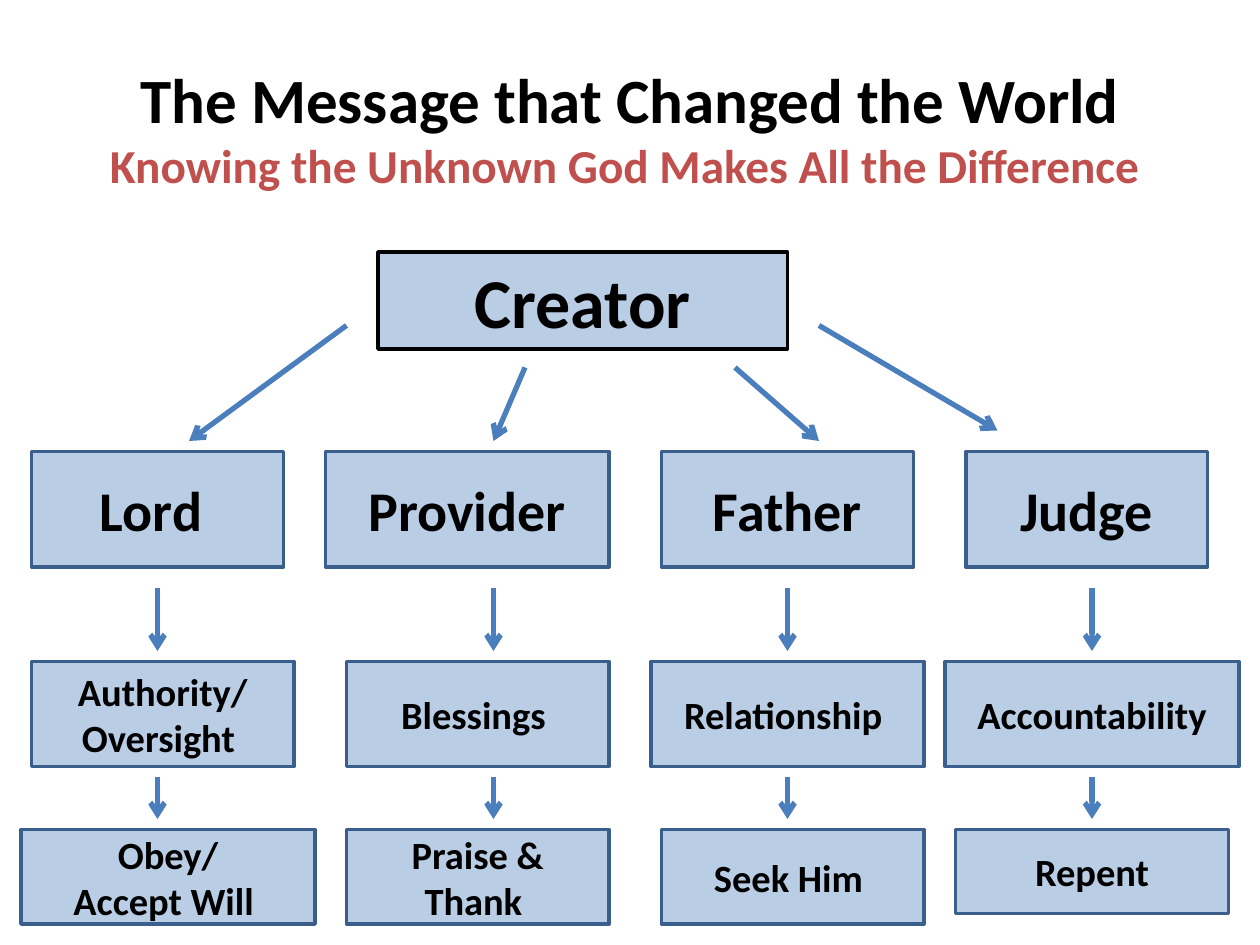
"""Build a one-page tree diagram on a grid of twelfths of an inch."""
from typing import Any, NamedTuple

from lxml import etree
from pptx import Presentation
from pptx import util as u
from pptx.dml.color import RGBColor
from pptx.enum import shapes, text
from pptx.oxml.ns import qn

COLUMNS, ROWS = 120, 90
CELL = u.Inches(10) // COLUMNS
COLORS = {
    "ink": "000000",
    "accent": "C0504D",
    "fill": "B9CDE5",
    "edge": "3A5F8C",
    "arrow": "4B7EBC",
}


class Node(NamedTuple):
    label: str
    column: float
    width: float
    height: float


class Level(NamedTuple):
    row: float
    size: int
    edge: str
    nodes: list[Node]


class Arrow(NamedTuple):
    start: tuple[float, float]
    end: tuple[float, float]


TITLE = [
    ("The Message that Changed the World", 36, "ink"),
    ("Knowing the Unknown God Makes All the Difference ", 27, "accent"),
]
LEVELS = [
    Level(24, 40, "ink", [Node("Creator", 36, 39, 9.25)]),
    Level(43, 32, "edge", [
        Node("Lord ", 3, 24, 11),
        Node("Provider", 31, 27, 11),
        Node("Father", 63, 24, 11),
        Node("Judge", 92, 23, 11),
    ]),
    Level(63, 22, "edge", [
        Node("Authority/\nOversight ", 3, 25, 10),
        Node("Blessings ", 33, 25, 10),
        Node("Relationship ", 62, 26, 10),
        Node("Accountability", 90, 28, 10),
    ]),
    Level(79, 22, "edge", [
        Node("Obey/\nAccept Will ", 2, 28, 9),
        Node("Praise & Thank ", 33, 25, 9),
        Node("Seek Him ", 63, 25, 9),
        Node("Repent", 91, 26, 8),
    ]),
]
BRANCHES = [
    Arrow((33, 31), (18, 42)),
    Arrow((50, 35), (47, 42)),
    Arrow((70, 35), (78, 42)),
    Arrow((78, 31), (95, 41)),
]
DROPS = [
    Arrow((column, top), (column, bottom))
    for top, bottom in [(56, 62), (74, 78)]
    for column in [15, 47, 75, 104]
]


def cells(*counts: float) -> list[int]:
    """Turn grid counts into lengths."""
    return [round(count * CELL) for count in counts]


def color(name: str) -> RGBColor:
    """Look up a named colour."""
    return RGBColor.from_string(COLORS[name])


def apply_format(target: Any, values: dict[str, Any]) -> None:
    """Set every attribute in the dict on the target."""
    for name, value in values.items():
        setattr(target, name, value)


def write_lines(box: Any, lines: list[tuple[str, int, str]], anchor: Any) -> None:
    """Write centred bold paragraphs into a box."""
    frame = box.text_frame
    apply_format(frame, {"word_wrap": True, "vertical_anchor": anchor})
    for index, (words, size, ink) in enumerate(lines):
        para = frame.add_paragraph() if index else frame.paragraphs[0]
        para.alignment = text.PP_ALIGN.CENTER
        span = para.add_run()
        span.text = words
        apply_format(span.font, {"name": "Calibri", "size": u.Pt(size), "bold": True})
        span.font.color.rgb = color(ink)


def draw_node(page: Any, level: Level, node: Node) -> None:
    """Draw one labelled rectangle."""
    box = page.shapes.add_shape(
        shapes.MSO_SHAPE.RECTANGLE,
        *cells(node.column, level.row, node.width, node.height),
    )
    box.shadow.inherit = False
    box.fill.solid()
    box.fill.fore_color.rgb = color("fill")
    box.line.color.rgb = color(level.edge)
    box.line.width = u.Pt(2)
    lines = [(words, level.size, "ink") for words in node.label.split("\n")]
    write_lines(box, lines, text.MSO_ANCHOR.MIDDLE)


def draw_arrow(page: Any, arrow: Arrow) -> None:
    """Draw one straight line with an open head at its end."""
    line = page.shapes.add_connector(
        shapes.MSO_CONNECTOR.STRAIGHT, *cells(*arrow.start, *arrow.end)
    )
    line.line.color.rgb = color("arrow")
    line.line.width = u.Pt(3)
    properties = line._element.spPr
    outline = properties.find(qn("a:ln"))
    etree.SubElement(outline, qn("a:tailEnd"), type="arrow")
    etree.SubElement(properties, qn("a:effectLst"))


def main() -> None:
    """Build and save the deck."""
    deck = Presentation()
    apply_format(deck, {"slide_width": COLUMNS * CELL, "slide_height": ROWS * CELL})
    page = deck.slides.add_slide(deck.slide_layouts[6])
    heading = page.shapes.add_textbox(*cells(2, 2, 116, 17))
    write_lines(heading, TITLE, text.MSO_ANCHOR.BOTTOM)
    for level in LEVELS:
        for node in level.nodes:
            draw_node(page, level, node)
    for arrow in BRANCHES + DROPS:
        draw_arrow(page, arrow)
    deck.save("out.pptx")


if __name__ == "__main__":
    main()
